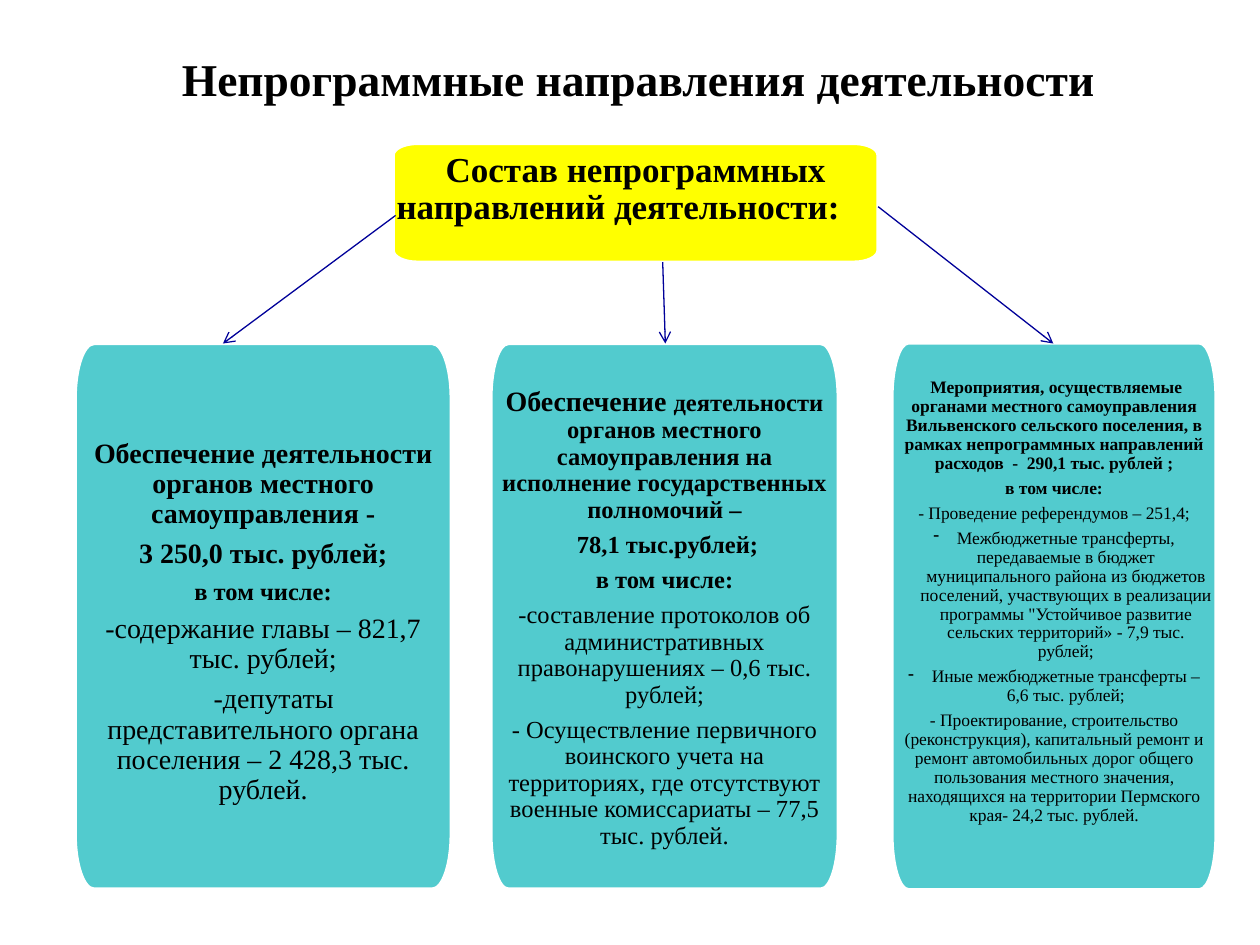
from lxml import etree
from pptx import Presentation
from pptx.dml.color import RGBColor
from pptx.enum.shapes import MSO_CONNECTOR
from pptx.enum.text import MSO_ANCHOR, PP_ALIGN
from pptx.oxml.ns import qn
from pptx.util import Pt

STRAIGHT = MSO_CONNECTOR.STRAIGHT
TOP = MSO_ANCHOR.TOP
LEFT, CENTER = PP_ALIGN.LEFT, PP_ALIGN.CENTER

COLORS = {"text": "000000", "header": "FFFF00", "column": "52CBCE",
          "outline": "FFFFFF", "arrow": "000099"}
FONT = "Times New Roman"
CURVE = 0.55  # pull of a quarter ellipse towards its corner
COLUMN_TOP, COLUMN_HEIGHT = 196.3, 311.8

# Each column: left, width, outline width, space above the text, paragraphs.
# Each paragraph: text or list of (text, size) spans, then its format.
COLUMNS = [
    (42.9, 215, 2, 54.6, [
        ("Обеспечение деятельности органов местного самоуправления -",
         {"size": 16, "bold": True}),
        ("3 250,0 тыс. рублей;", {"size": 16, "bold": True}),
        ("в том числе:", {"size": 14, "bold": True}),
        ("-содержание главы – 821,7 тыс. рублей;", {"size": 16}),
        ("-депутаты представительного органа поселения – 2 428,3 тыс. рублей.",
         {"size": 16, "indent": 12}),
    ]),
    (280.5, 198.6, 2, 25.2, [
        ([("Обеспечение ", 16),
          ("деятельности органов местного самоуправления на исполнение "
           "государственных полномочий –", 14)], {"size": 14, "bold": True}),
        ("78,1 тыс.рублей;", {"size": 14, "bold": True, "indent": 3.5}),
        ("в том числе:", {"size": 14, "bold": True}),
        ("-составление протоколов об административных правонарушениях – "
         "0,6 тыс. рублей;", {"size": 14}),
        ("- Осуществление первичного воинского учета на территориях, где "
         "отсутствуют военные комиссариаты – 77,5 тыс. рублей.", {"size": 14}),
    ]),
    (510, 184.6, 1.25, 19.8, [
        ("Мероприятия, осуществляемые органами местного самоуправления "
         "Вильвенского сельского поселения, в рамках непрограммных направлений "
         "расходов  -  290,1 тыс. рублей ;",
         {"size": 10, "bold": True, "indent": 2.5}),
        ("в том числе:", {"size": 10, "bold": True}),
        ("- Проведение референдумов – 251,4;", {"size": 10}),
        ("Межбюджетные трансферты, передаваемые в бюджет муниципального района "
         "из бюджетов поселений, участвующих в реализации программы "
         "\"Устойчивое развитие сельских территорий» - 7,9 тыс. рублей;",
         {"size": 10, "bullet": "-"}),
        ("Иные межбюджетные трансферты – 6,6 тыс. рублей;",
         {"size": 10, "bullet": "-"}),
        ("- Проектирование, строительство (реконструкция), капитальный ремонт и "
         "ремонт автомобильных дорог общего пользования местного значения, "
         "находящихся на территории Пермского края- 24,2 тыс. рублей.",
         {"size": 10}),
    ]),
]
ARROWS = [((226.1, 123.1), (127.4, 196.3)),
          ((501.8, 118.1), (601.9, 196.3)),
          ((378.7, 149.8), (380.2, 196.3))]


def color(name):
    return RGBColor.from_string(COLORS[name])


def write(para, text, size, bold=False, align=CENTER, spacing=0.9, after=0.35,
          indent=0, bullet=None):
    """Fill a paragraph; after is the space below as a share of the size."""
    para.alignment = align
    para.line_spacing = spacing
    para.space_after = Pt(after * size)
    props = para._p.get_or_add_pPr()
    if bullet:
        props.set("marL", str(Pt(13.5)))
        indent = -13.5
        etree.SubElement(props, qn("a:buChar")).set("char", bullet)
    if indent:
        props.set("indent", str(Pt(indent)))
    for content, span_size in [(text, size)] if isinstance(text, str) else text:
        span = para.add_run()
        span.text = content
        span.font.name = FONT
        span.font.size = Pt(span_size)
        span.font.bold = bold
        span.font.color.rgb = color("text")


def round_corners(panel):
    """Turn every second straight segment of the octagon into a quarter ellipse."""
    outline = panel._element.find(".//" + qn("a:path"))
    points = [(int(point.get("x")), int(point.get("y")))
              for point in outline.iter(qn("a:pt"))]
    right, bottom = panel.width, panel.height
    corners = [(0, 0), (right, 0), (right, bottom), (0, bottom)]
    segments = outline.findall(qn("a:lnTo"))[::2]
    for index, (segment, corner) in enumerate(zip(segments, corners)):
        start, end = points[2 * index:2 * index + 2]
        curve = etree.Element(qn("a:cubicBezTo"))
        for base, pull in ((start, CURVE), (end, CURVE), (end, 0)):
            point = etree.SubElement(curve, qn("a:pt"))
            for axis, value, target in zip("xy", base, corner):
                point.set(axis, str(round(value + pull * (target - value))))
        outline.replace(segment, curve)


def add_panel(page, box, fill, line_width, text_top, paragraphs):
    """Box with elliptical corners: 5% of its width by 10% of its height."""
    left, top, width, height = box
    right, bottom = left + width, top + height
    rx, ry = width * 0.05, height * 0.1
    octagon = [(left, top + ry), (left + rx, top), (right - rx, top),
               (right, top + ry), (right, bottom - ry), (right - rx, bottom),
               (left + rx, bottom), (left, bottom - ry)]
    start, *others = [(Pt(x), Pt(y)) for x, y in octagon]
    builder = page.shapes.build_freeform(*start)
    builder.add_line_segments(others, close=True)
    panel = builder.convert_to_shape()
    round_corners(panel)
    panel.shadow.inherit = False
    panel.fill.solid()
    panel.fill.fore_color.rgb = color(fill)
    panel.line.color.rgb = color("outline")
    panel.line.width = Pt(line_width)

    frame = panel.text_frame
    frame.word_wrap = True
    frame.vertical_anchor = TOP
    frame.margin_left = frame.margin_right = frame.margin_bottom = Pt(2)
    frame.margin_top = Pt(text_top)
    for index, (text, style) in enumerate(paragraphs):
        para = frame.add_paragraph() if index else frame.paragraphs[0]
        write(para, text, **style)


def add_title(page, box):
    frame = page.shapes.add_textbox(*map(Pt, box)).text_frame
    frame.word_wrap = True
    write(frame.paragraphs[0], "Непрограммные направления деятельности",
          size=26, bold=True, spacing=1, after=0)


def add_arrow(page, start, end):
    arrow = page.shapes.add_connector(STRAIGHT, *map(Pt, start + end))
    arrow.line.color.rgb = color("arrow")
    arrow.line.width = Pt(0.75)
    etree.SubElement(arrow.line._get_or_add_ln(), qn("a:tailEnd")).set("type", "arrow")
    etree.SubElement(arrow._element.spPr, qn("a:effectLst"))


def main():
    deck = Presentation()
    deck.slide_width, deck.slide_height = Pt(720), Pt(540)
    page = deck.slides.add_slide(deck.slide_layouts[6])
    add_title(page, (53.3, 25.9, 623.5, 38.9))
    add_panel(page, (224.6, 81.9, 277.2, 68), "header", 2, 4.9, [
        ("Состав непрограммных направлений деятельности:",
         {"size": 20, "bold": True, "align": LEFT, "indent": 28})])
    for left, width, line_width, text_top, paragraphs in COLUMNS:
        add_panel(page, (left, COLUMN_TOP, width, COLUMN_HEIGHT), "column",
                  line_width, text_top, paragraphs)
    for start, end in ARROWS:
        add_arrow(page, start, end)
    deck.save("out.pptx")


if __name__ == "__main__":
    main()
